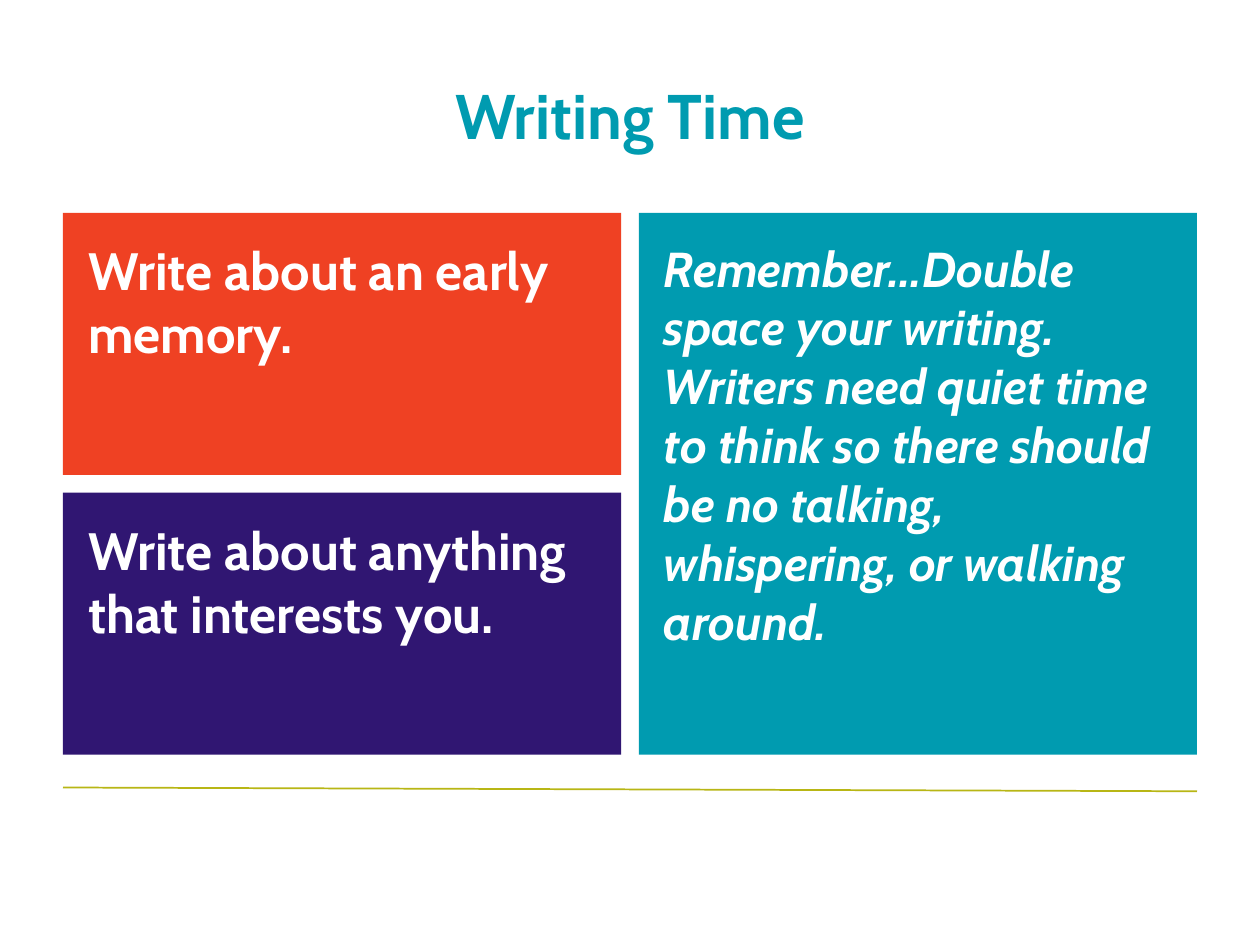
from pptx import Presentation
from pptx.dml.color import RGBColor
from pptx.enum.shapes import MSO_CONNECTOR, MSO_SHAPE
from pptx.enum.text import MSO_ANCHOR, PP_ALIGN
from pptx.oxml.ns import qn
from pptx.util import Inches, Pt
from lxml.etree import SubElement

WHITE = RGBColor(0xFF, 0xFF, 0xFF)
TEAL = RGBColor(0x00, 0x9B, 0xB0)
ORANGE = RGBColor(0xEF, 0x41, 0x23)
PURPLE = RGBColor(0x30, 0x16, 0x72)
OLIVE = RGBColor(0xB8, 0xB6, 0x15)

TITLE = "Writing Time"
REMINDER = ("Remember…Double space your writing. Writers need quiet time to think "
            "so there should be no talking, whispering, or walking around.")
# text, fill, size, italic, column, row, rows spanned
PANELS = [
    (REMINDER, TEAL, 28, True, 1, 0, 2),
    ("Write about an early memory.", ORANGE, 30, False, 0, 0, 1),
    ("Write about anything that interests you.", PURPLE, 30, False, 0, 1, 1),
]

LEFT, TOP, WIDTH = 0.5, 1.69, 9
PANEL_W, PANEL_H, GAP = 4.43, 2.08, 0.14
PADDING = 0.2


def write(shape, text, size, color, align, italic=False):
    tf = shape.text_frame
    tf.word_wrap = True
    p = tf.paragraphs[0]
    p.text = text
    p.alignment = align
    font = p.font
    font.name, font.size, font.bold, font.italic = "Cabin", Pt(size), True, italic
    font.color.rgb = color
    return tf


def add_panel(s, text, fill, size, italic, col, row, span):
    shape = s.shapes.add_shape(
        MSO_SHAPE.RECTANGLE,
        Inches(LEFT + col * (PANEL_W + GAP)), Inches(TOP + row * (PANEL_H + GAP)),
        Inches(PANEL_W), Inches(span * PANEL_H + (span - 1) * GAP))
    shape.shadow.inherit = False
    shape.fill.solid()
    shape.fill.fore_color.rgb = fill
    shape.line.fill.background()
    tf = write(shape, text, size, WHITE, PP_ALIGN.LEFT, italic)
    tf.vertical_anchor = MSO_ANCHOR.TOP
    tf.margin_left = tf.margin_right = Inches(PADDING)
    tf.margin_top = tf.margin_bottom = Inches(PADDING)


prs = Presentation()
prs.slide_width, prs.slide_height = Inches(10), Inches(7.5)
s = prs.slides.add_slide(prs.slide_layouts[6])

rule = s.shapes.add_connector(MSO_CONNECTOR.STRAIGHT, Inches(LEFT), Inches(6.25),
                              Inches(LEFT + WIDTH), Inches(6.28))
rule.line.color.rgb = OLIVE
rule.line.width = Pt(1)
SubElement(rule._element.spPr, qn("a:effectLst"))

title = s.shapes.add_textbox(Inches(LEFT), Inches(0.34), Inches(WIDTH), Inches(1.14))
write(title, TITLE, 36, TEAL, PP_ALIGN.CENTER).vertical_anchor = MSO_ANCHOR.MIDDLE

for panel in PANELS:
    add_panel(s, *panel)

prs.save("out.pptx")
